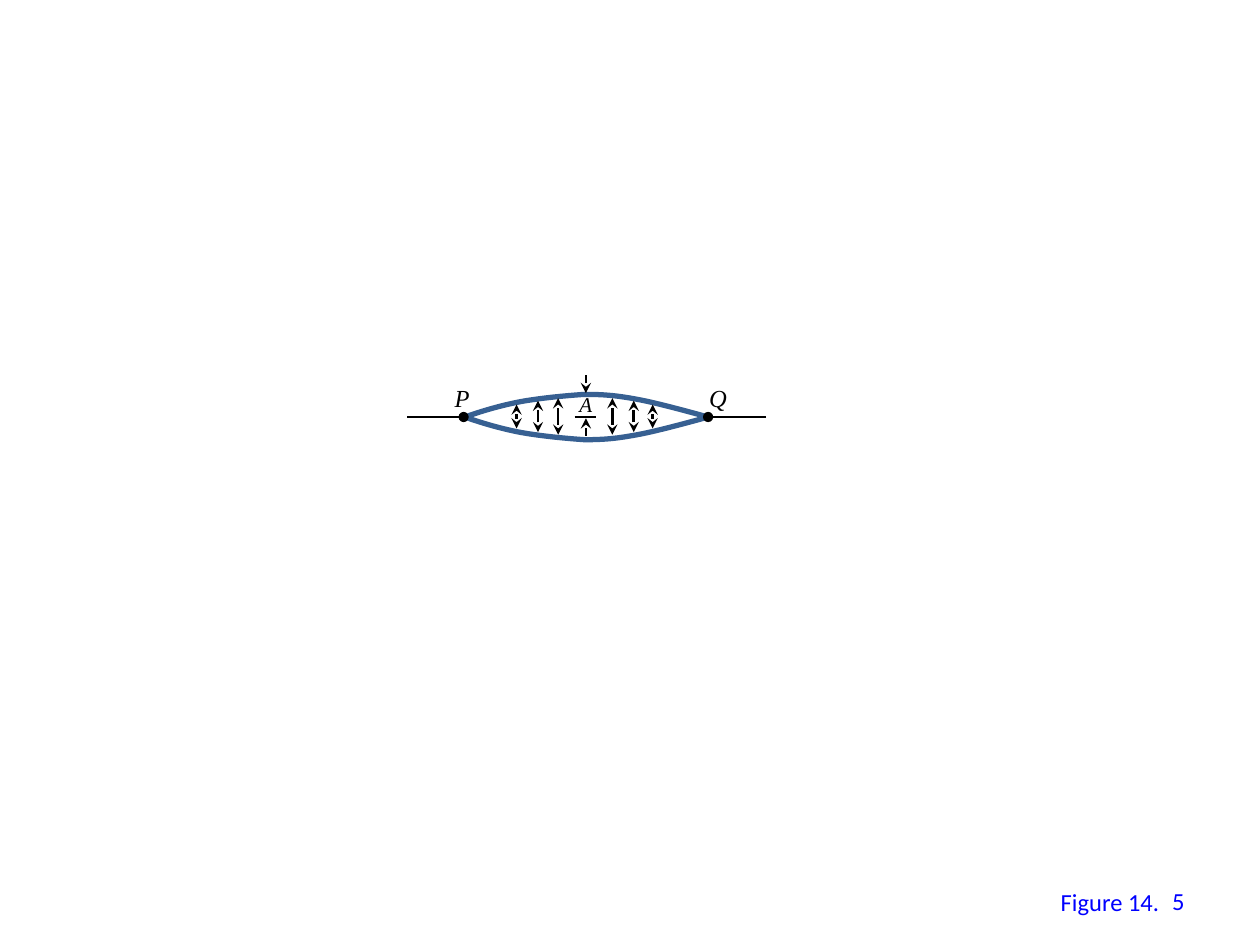
from dataclasses import dataclass

from lxml import etree
from pptx import Presentation
from pptx.dml.color import RGBColor
from pptx.enum import shapes, text
from pptx.oxml import ns
from pptx.util import Inches, Pt


@dataclass(frozen=True)
class Theme:
    ink: RGBColor = RGBColor(0, 0, 0)
    string: RGBColor = RGBColor(0x37, 0x60, 0x92)
    caption: RGBColor = RGBColor(0, 0, 0xFF)
    math_font: str = "Times New Roman"
    caption_font: str = "Calibri"
    label_size: int = 14
    amplitude_size: int = 12


theme = Theme()
prs = Presentation()
prs.slide_width, prs.slide_height = Inches(10), Inches(7.5)
slide = prs.slides.add_slide(prs.slide_layouts[6])


def add_line(start, end, width=1.5, ends=()):
    """Draw a straight line; ends lists 'headEnd' (start) and 'tailEnd' (end) arrowheads."""
    line = slide.shapes.add_connector(
        shapes.MSO_CONNECTOR.STRAIGHT, *(Inches(v) for v in (*start, *end)))
    line.line.color.rgb = theme.ink
    line.line.width = Pt(width)
    for tag in ends:
        etree.SubElement(line.line._get_or_add_ln(), ns.qn(f"a:{tag}"), type="stealth")
    etree.SubElement(line._element.spPr, ns.qn("a:effectLst"))


def add_label(words, box, size, font, color, italic=False, wrap=False):
    label = slide.shapes.add_textbox(*(Inches(v) for v in box))
    frame = label.text_frame
    frame.word_wrap = wrap
    if not wrap:
        frame.auto_size = text.MSO_AUTO_SIZE.SHAPE_TO_FIT_TEXT
    run = frame.paragraphs[0].add_run()
    run.text = words
    run.font.size = Pt(size)
    run.font.name = font
    run.font.italic = italic
    run.font.color.rgb = color
    return frame


add_label("Figure 14.", (8.32, 6.99, 0.99, 0.34), theme.label_size,
          theme.caption_font, theme.caption)

# Straight string outside the nodes
axis_y = 3.31
add_line((3.67, axis_y), (3.23, axis_y))
add_line((6.08, axis_y), (5.63, axis_y))

# Vibrating loop: Bezier points as x and height above the axis, mirrored below it
loop = [(3.69, 0), (3.83, 0.05), (3.97, 0.09), (4.12, 0.12),
        (4.28, 0.15), (4.49, 0.17), (4.64, 0.18),
        (4.8, 0.18), (4.9, 0.17), (5.06, 0.14),
        (5.23, 0.11), (5.62, 0), (5.62, 0)]
for side in (-1, 1):
    points = [(Inches(x), Inches(axis_y + side * height)) for x, height in loop]
    builder = slide.shapes.build_freeform(*points[0])
    builder.add_line_segments(points[1:], close=False)
    half = builder.convert_to_shape()
    half.fill.background()
    half.line.color.rgb = theme.string
    half.line.width = Pt(3)
    half.shadow.inherit = False
    # Each three line segments become one cubic curve
    segments = list(half._element.iter(ns.qn("a:lnTo")))
    outline = segments[0].getparent()
    for i in range(0, len(segments), 3):
        curve = etree.SubElement(outline, ns.qn("a:cubicBezTo"))
        for segment in segments[i:i + 3]:
            curve.append(segment[0])
            outline.remove(segment)

for node_x in (3.65, 5.59):
    node = slide.shapes.add_shape(shapes.MSO_SHAPE.OVAL, Inches(node_x), Inches(3.28),
                                  Inches(0.06), Inches(0.06))
    node.fill.solid()
    node.fill.fore_color.rgb = theme.ink
    node.line.color.rgb = theme.ink
    node.line.width = Pt(1.5)
    node.shadow.inherit = False

# Displacement arrows, in pairs either side of the antinode
for left_x, right_x, bottom, top in ((4.1, 5.18, 3.4, 3.21),
                                     (4.27, 5.03, 3.43, 3.18),
                                     (4.43, 4.86, 3.45, 3.16)):
    for x in (left_x, right_x):
        add_line((x, bottom), (x, top), ends=("headEnd", "tailEnd"))

# Amplitude at the antinode
antinode_x = 4.65
add_line((4.56, axis_y), (4.73, axis_y), width=1)
add_line((antinode_x, 3.46), (antinode_x, 3.32), ends=("tailEnd",))
add_line((antinode_x, 2.98), (antinode_x, 3.12), ends=("tailEnd",))

for letter, box, size in (("A", (4.5, 3.06, 0.35, 0.3), theme.amplitude_size),
                          ("P", (3.51, 2.99, 0.37, 0.34), theme.label_size),
                          ("Q", (5.53, 2.99, 0.4, 0.34), theme.label_size)):
    add_label(letter, box, size, theme.math_font, theme.ink, italic=True)

figure_number = add_label("5", (7.17, 6.95, 2.33, 0.4), theme.label_size,
                          theme.caption_font, theme.caption, wrap=True)
figure_number.vertical_anchor = text.MSO_ANCHOR.MIDDLE
figure_number.paragraphs[0].alignment = text.PP_ALIGN.RIGHT

prs.save("out.pptx")
